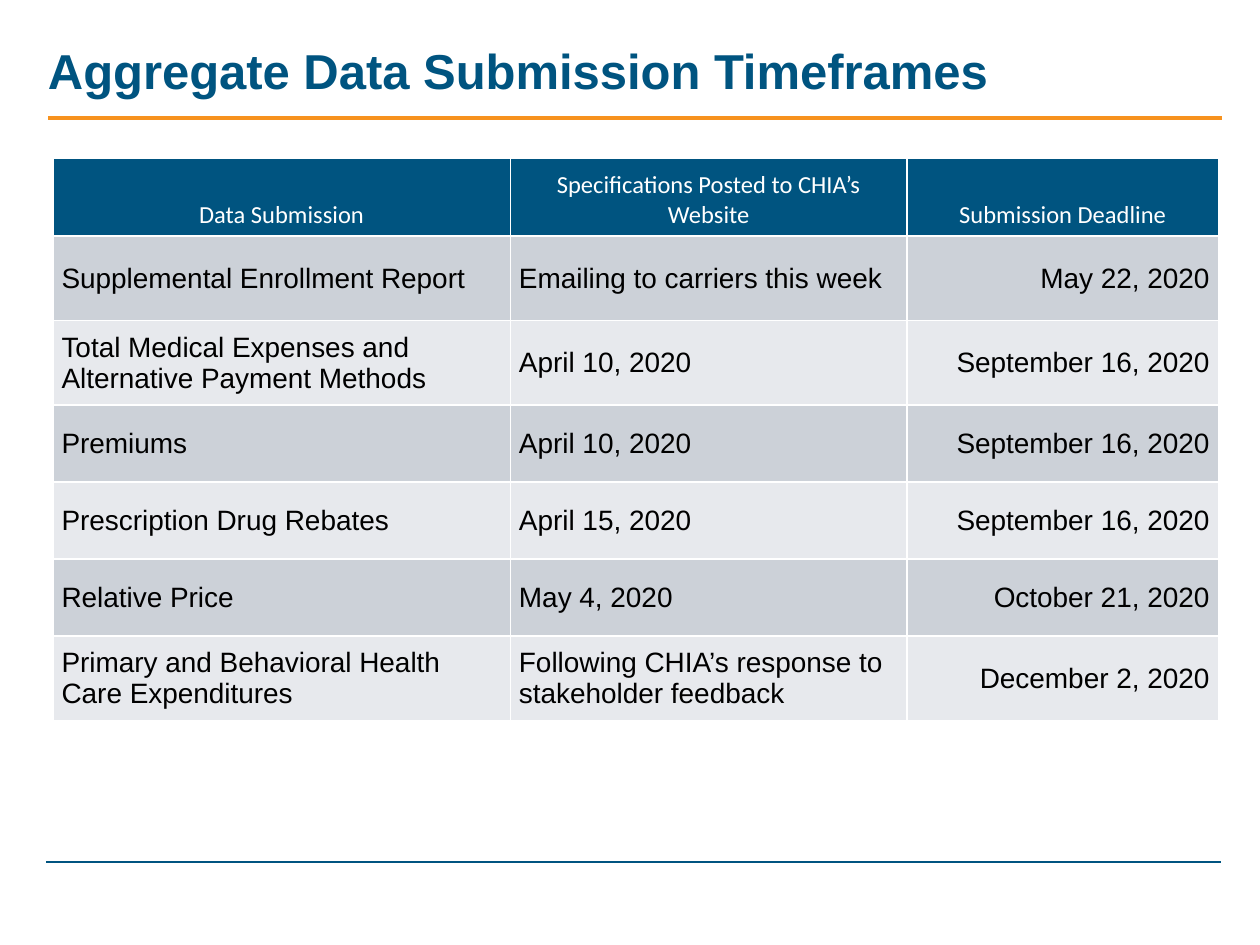
from dataclasses import dataclass
from lxml.etree import SubElement
from pptx import Presentation
from pptx.dml.color import RGBColor
from pptx.enum.shapes import MSO_CONNECTOR as Connector
from pptx.enum.text import MSO_ANCHOR as Anchor, PP_ALIGN as Align
from pptx.oxml import parse_xml
from pptx.oxml.ns import nsdecls, qn
from pptx.util import Pt


@dataclass(frozen=True)
class Theme:
    blue: str = "005480"
    orange: str = "F7921E"
    white: str = "FFFFFF"
    black: str = "000000"
    bands: tuple = ("CCD1D8", "E7E9ED")
    title_size: int = 28
    header_size: int = 14
    body_size: int = 16
    body_font: str = "Arial"
    header_font: str = "Calibri"


theme = Theme()


def write(frame, text, *, size, color, font=theme.body_font, bold=False,
          align=Align.LEFT, anchor=Anchor.MIDDLE):
    frame.word_wrap = True
    frame.vertical_anchor = anchor
    para = frame.paragraphs[0]
    para.alignment = align
    span = para.add_run()
    span.text = text
    span.font.name = font
    span.font.size = Pt(size)
    span.font.bold = bold
    span.font.color.rgb = RGBColor.from_string(color)


def style_cell(cell, fill):
    cell.fill.solid()
    cell.fill.fore_color.rgb = RGBColor.from_string(fill)
    properties = cell._tc.get_or_add_tcPr()
    for position, side in enumerate("LRTB"):
        border = parse_xml(
            f'<a:ln{side} {nsdecls("a")} w="{Pt(1)}"><a:solidFill>'
            f'<a:srgbClr val="{theme.white}"/></a:solidFill></a:ln{side}>')
        properties.insert(position, border)


deck = Presentation()
deck.slide_width, deck.slide_height = Pt(720), Pt(540)
page = deck.slides.add_slide(deck.slide_layouts[6])

rules = [
    (26.5, 492.5, theme.blue, 0.75),
    (27.5, 67.5, theme.orange, 2.25),
]
for left, top, color, width in rules:
    rule = page.shapes.add_connector(
        Connector.STRAIGHT, Pt(left), Pt(top), Pt(left + 671), Pt(top))
    rule.line.color.rgb = RGBColor.from_string(color)
    rule.line.width = Pt(width)
    SubElement(rule._element.spPr, qn("a:effectLst"))

title = page.shapes.add_textbox(Pt(20.3), Pt(19.5), Pt(677), Pt(41))
write(title.text_frame, "Aggregate Data Submission Timeframes",
      size=theme.title_size, color=theme.blue, bold=True, anchor=Anchor.BOTTOM)

headers = ["Data Submission", "Specifications Posted to CHIA’s Website",
           "Submission Deadline"]
submissions = [
    ("Supplemental Enrollment Report", "Emailing to carriers this week", "May 22, 2020"),
    ("Total Medical Expenses and Alternative Payment Methods", "April 10, 2020",
     "September 16, 2020"),
    ("Premiums", "April 10, 2020", "September 16, 2020"),
    ("Prescription Drug Rebates", "April 15, 2020", "September 16, 2020"),
    ("Relative Price", "May 4, 2020", "October 21, 2020"),
    ("Primary and Behavioral Health Care Expenditures",
     "Following CHIA’s response to stakeholder feedback", "December 2, 2020"),
]
column_widths = [261.4, 226.8, 177.8]
row_heights = [44.5, 48.2, 48.2, 44, 44, 44, 48.2]

table = page.shapes.add_table(
    len(row_heights), len(column_widths), Pt(30.2), Pt(90.5),
    Pt(sum(column_widths)), Pt(sum(row_heights))).table
for column, width in zip(table.columns, column_widths):
    column.width = Pt(width)
for row, height in zip(table.rows, row_heights):
    row.height = Pt(height)

for cell, text in zip(table.rows[0].cells, headers):
    style_cell(cell, theme.blue)
    cell.vertical_anchor = Anchor.BOTTOM
    write(cell.text_frame, text, size=theme.header_size, color=theme.white,
          font=theme.header_font, align=Align.CENTER, anchor=Anchor.BOTTOM)

alignments = [Align.LEFT, Align.LEFT, Align.RIGHT]
for index, submission in enumerate(submissions):
    for cell, text, align in zip(table.rows[index + 1].cells, submission, alignments):
        style_cell(cell, theme.bands[index % 2])
        cell.vertical_anchor = Anchor.MIDDLE
        cell.margin_left = cell.margin_right = Pt(5)
        cell.margin_top = cell.margin_bottom = Pt(5)
        write(cell.text_frame, text, size=theme.body_size, color=theme.black, align=align)

deck.save("out.pptx")
